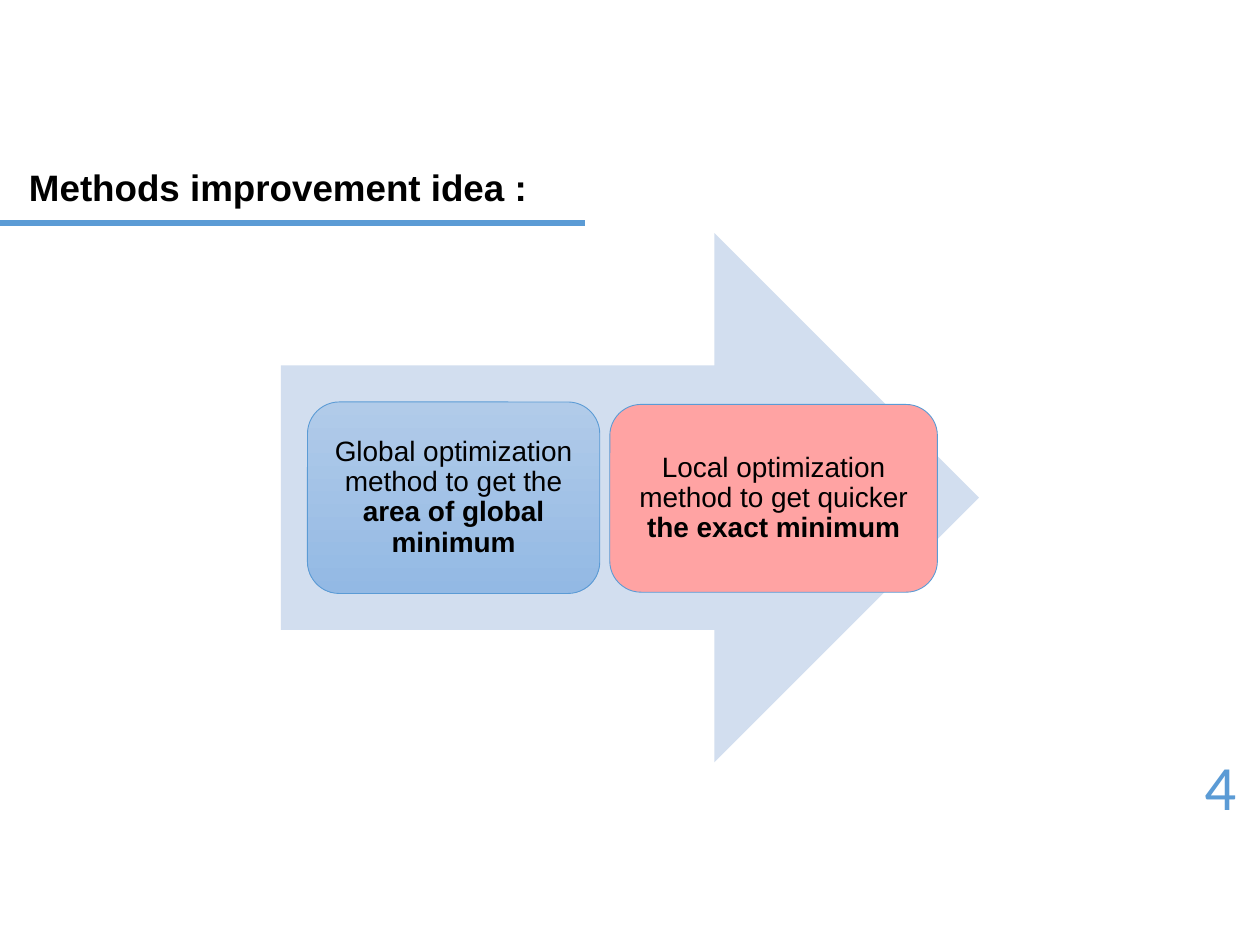
"""Build the slide on combining global and local optimization methods."""
import pptx
import pptx.util
import pptx.dml.color
import pptx.enum.shapes
import pptx.enum.text
import pptx.oxml
import pptx.oxml.ns

Inches, Pt = pptx.util.Inches, pptx.util.Pt
Shape = pptx.enum.shapes.MSO_SHAPE
Align = pptx.enum.text.PP_ALIGN
Anchor = pptx.enum.text.MSO_ANCHOR

COLORS = {"ink": "000000", "blue": "5B9BD5", "arrow": "D2DEEF",
          "light": "B1CBE9", "deep": "93B9E4", "pink": "FFA3A3"}
TITLE = "Methods improvement idea :"
NUMBER = "4"
STEPS = [
    {"plain": "Global optimization method to get the ", "bold": "area of global minimum",
     "at": (2.44, 3.19, 2.32, 1.52), "fill": ("light", "deep"), "inset": 0.13},
    {"plain": "Local optimization method to get quicker ", "bold": "the exact minimum",
     "at": (4.84, 3.21, 2.6, 1.49), "fill": ("pink",), "inset": 0.07},
]


def color(name):
    return pptx.dml.color.RGBColor.from_string(COLORS[name])


def place(at):
    return [Inches(n) for n in at]


def style(font, size, name="Arial", ink="ink", bold=False):
    font.name, font.size, font.bold = name, Pt(size), bold
    font.color.rgb = color(ink)


def pad(frame, side, top):
    frame.margin_left = frame.margin_right = Inches(side)
    frame.margin_top = frame.margin_bottom = Inches(top)


def paint(fill, names):
    if len(names) == 1:
        fill.solid()
        fill.fore_color.rgb = color(names[0])
        return
    fill.gradient()
    fill.gradient_angle = 270
    for stop, name, spot in zip(fill.gradient_stops, names, (0, 1)):
        stop.color.rgb = color(name)
        stop.position = spot


def add_shape(slide, kind, at, names):
    shape = slide.shapes.add_shape(kind, *place(at))
    shape.shadow.inherit = False
    paint(shape.fill, names)
    return shape


def add_title(slide):
    title = slide.shapes.title
    title.left, title.top, title.width, title.height = place((0.13, 1.26, 4.2, 0.45))
    frame = title.text_frame
    frame.text = TITLE
    frame.word_wrap = False
    frame.vertical_anchor = Anchor.TOP
    pad(frame, 0.1, 0.05)
    frame.paragraphs[0].alignment = Align.LEFT
    style(frame.paragraphs[0].runs[0].font, 21, bold=True)


def add_rule(slide):
    ends = place((0, 1.77, 4.64, 1.77))
    rule = slide.shapes.add_connector(pptx.enum.shapes.MSO_CONNECTOR.STRAIGHT, *ends)
    rule.line.color.rgb = color("blue")
    rule.line.width = Pt(3)
    props = rule._element.spPr
    props.append(pptx.oxml.parse_xml(
        "<a:effectLst %s/>" % pptx.oxml.ns.nsdecls("a")))


def add_number(slide):
    frame = slide.shapes.add_textbox(*place((9.48, 5.89, 0.41, 0.68))).text_frame
    frame.word_wrap = True
    pad(frame, 0.07, 0.04)
    frame.text = NUMBER
    frame.paragraphs[0].alignment = Align.CENTER
    style(frame.paragraphs[0].runs[0].font, 36, "Calibri", "blue")


def add_step(slide, step):
    box = add_shape(slide, Shape.ROUNDED_RECTANGLE, step["at"], step["fill"])
    box.line.color.rgb = color("blue")
    box.line.width = Pt(0.5)
    frame = box.text_frame
    frame.word_wrap = True
    frame.vertical_anchor = Anchor.MIDDLE
    pad(frame, step["inset"], step["inset"])
    para = frame.paragraphs[0]
    para.alignment = Align.CENTER
    para.line_spacing = 0.9
    for key in ("plain", "bold"):
        run = para.add_run()
        run.text = step[key]
        style(run.font, 16, bold=key == "bold")


def main():
    deck = pptx.Presentation()
    deck.slide_width, deck.slide_height = Inches(10), Inches(7.5)
    slide = deck.slides.add_slide(deck.slide_layouts[5])
    add_rule(slide)
    add_title(slide)
    add_number(slide)
    arrow = add_shape(slide, Shape.RIGHT_ARROW, (2.23, 1.85, 5.54, 4.2), ("arrow",))
    arrow.line.fill.background()
    for step in STEPS:
        add_step(slide, step)
    deck.save("out.pptx")


if __name__ == "__main__":
    main()
